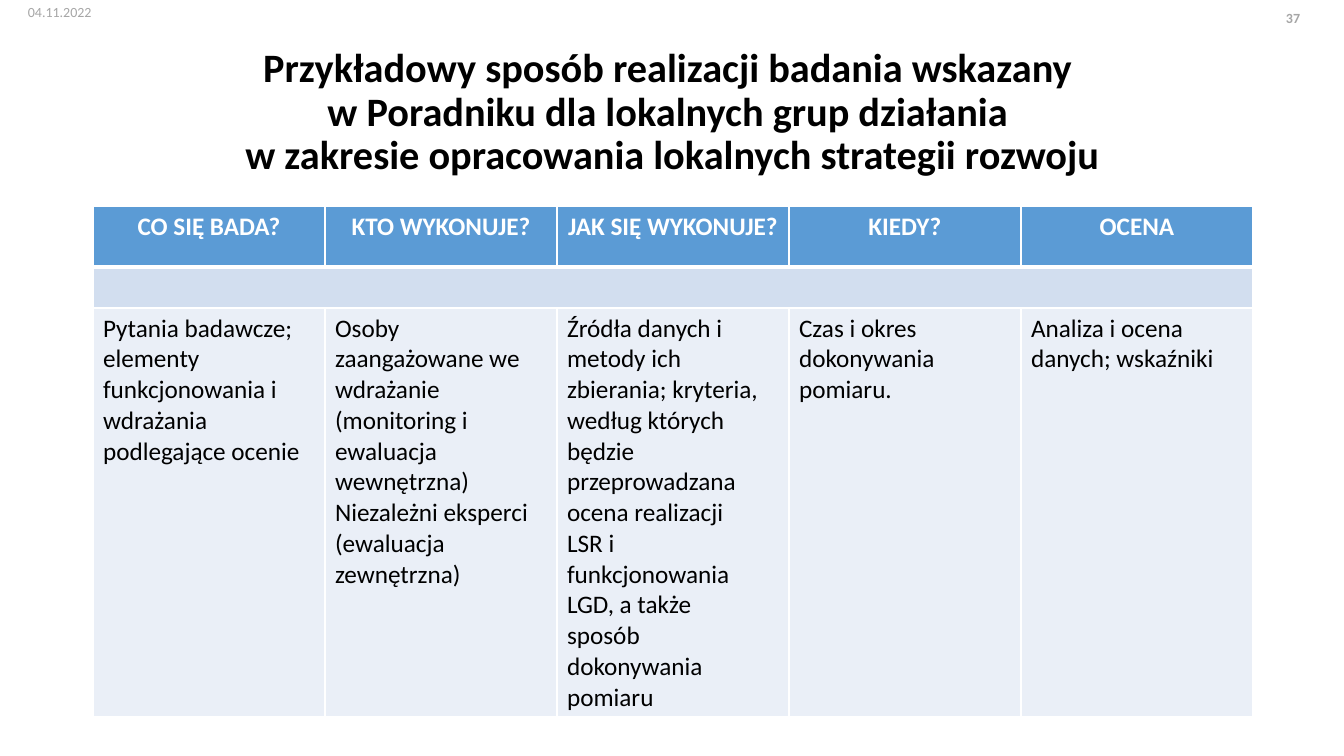
from lxml.etree import SubElement
from pptx import Presentation
from pptx.dml.color import RGBColor
from pptx.enum.text import MSO_ANCHOR as Anchor, PP_ALIGN as Align
from pptx.oxml.ns import qn
from pptx.util import Pt

DATE = "04.11.2022"
PAGE = "37"
TITLE = ("Przykładowy sposób realizacji badania wskazany \v"
         "w Poradniku dla lokalnych grup działania \v"
         "w zakresie opracowania lokalnych strategii rozwoju")

# heading, paragraphs below it
COLUMNS = [
    ("CO SIĘ BADA?",
     ["Pytania badawcze; elementy funkcjonowania i wdrażania podlegające ocenie"]),
    ("KTO WYKONUJE?",
     ["Osoby zaangażowane we wdrażanie (monitoring i ewaluacja wewnętrzna)",
      "Niezależni eksperci (ewaluacja zewnętrzna)"]),
    ("JAK SIĘ WYKONUJE?",
     ["Źródła danych i", "metody ich", "zbierania; kryteria,", "według których",
      "będzie", "przeprowadzana", "ocena realizacji", "LSR i", "funkcjonowania",
      "LGD, a także", "sposób", "dokonywania", "pomiaru"]),
    ("KIEDY?", ["Czas i okres", "dokonywania", "pomiaru."]),
    ("OCENA", ["Analiza i ocena", "danych; wskaźniki"]),
]

FONT = "Calibri"
WHITE, BLACK, GREY = "FFFFFF", "000000", "A6A6A6"
HEADER_FILL, BAND_FILL, BODY_FILL = "5B9BD5", "D2DEEF", "EAEFF7"
ROW_HEIGHTS = [61, 41, 409]
TABLE_LEFT, TABLE_TOP, COLUMN_WIDTH = 93, 206, 232


def px(length):
    return round(length * 914400 / 100.8)


def rgb(code):
    return RGBColor.from_string(code)


def write(frame, text, size, color, bold=False, align=Align.LEFT, spacing=None):
    frame.text = text
    for paragraph in frame.paragraphs:
        paragraph.alignment = align
        paragraph.line_spacing = spacing
        font = paragraph.font
        font.name, font.size, font.bold = FONT, Pt(size), bold
        font.color.rgb = rgb(color)


def add_text(slide, box, text, size, color, anchor=Anchor.TOP, **style):
    frame = slide.shapes.add_textbox(*map(px, box)).text_frame
    frame.word_wrap = True
    frame.vertical_anchor = anchor
    write(frame, text, size, color, **style)


def paint(cell, fill, top=1, bottom=1):
    """Fill a cell and rule its sides in white; top and bottom are in points."""
    properties = cell._tc.get_or_add_tcPr()
    for side, width in (("L", 1), ("R", 1), ("T", top), ("B", bottom)):
        line = SubElement(properties, qn(f"a:ln{side}"), w=str(Pt(width)))
        solid = SubElement(line, qn("a:solidFill"))
        SubElement(solid, qn("a:srgbClr"), val=WHITE)
    cell.fill.solid()
    cell.fill.fore_color.rgb = rgb(fill)


def add_survey_table(slide):
    table = slide.shapes.add_table(
        len(ROW_HEIGHTS), len(COLUMNS), px(TABLE_LEFT), px(TABLE_TOP),
        px(COLUMN_WIDTH * len(COLUMNS)), px(sum(ROW_HEIGHTS))).table
    for row, height in zip(table.rows, ROW_HEIGHTS):
        row.height = px(height)
    for index, (heading, details) in enumerate(COLUMNS):
        table.columns[index].width = px(COLUMN_WIDTH)
        header, body = table.cell(0, index), table.cell(2, index)
        write(header.text_frame, heading, 18, WHITE, bold=True, align=Align.CENTER)
        paint(header, HEADER_FILL, bottom=3)
        write(body.text_frame, "\n".join(details), 18, BLACK)
        paint(body, BODY_FILL)
    band = table.cell(1, 0)
    band.merge(table.cell(1, len(COLUMNS) - 1))
    paint(band, BAND_FILL, top=3)


def main():
    deck = Presentation()
    deck.slide_width, deck.slide_height = px(1344), px(756)
    slide = deck.slides.add_slide(deck.slide_layouts[6])
    add_text(slide, (18, -1, 302, 40), DATE, 10, GREY)
    add_text(slide, (1008, 5, 302, 40), PAGE, 10, GREY, bold=True, align=Align.RIGHT)
    add_text(slide, (93, 40, 1159, 146), TITLE, 28.8, BLACK, anchor=Anchor.MIDDLE,
             bold=True, align=Align.CENTER, spacing=0.9)
    add_survey_table(slide)
    deck.save("out.pptx")


if __name__ == "__main__":
    main()
